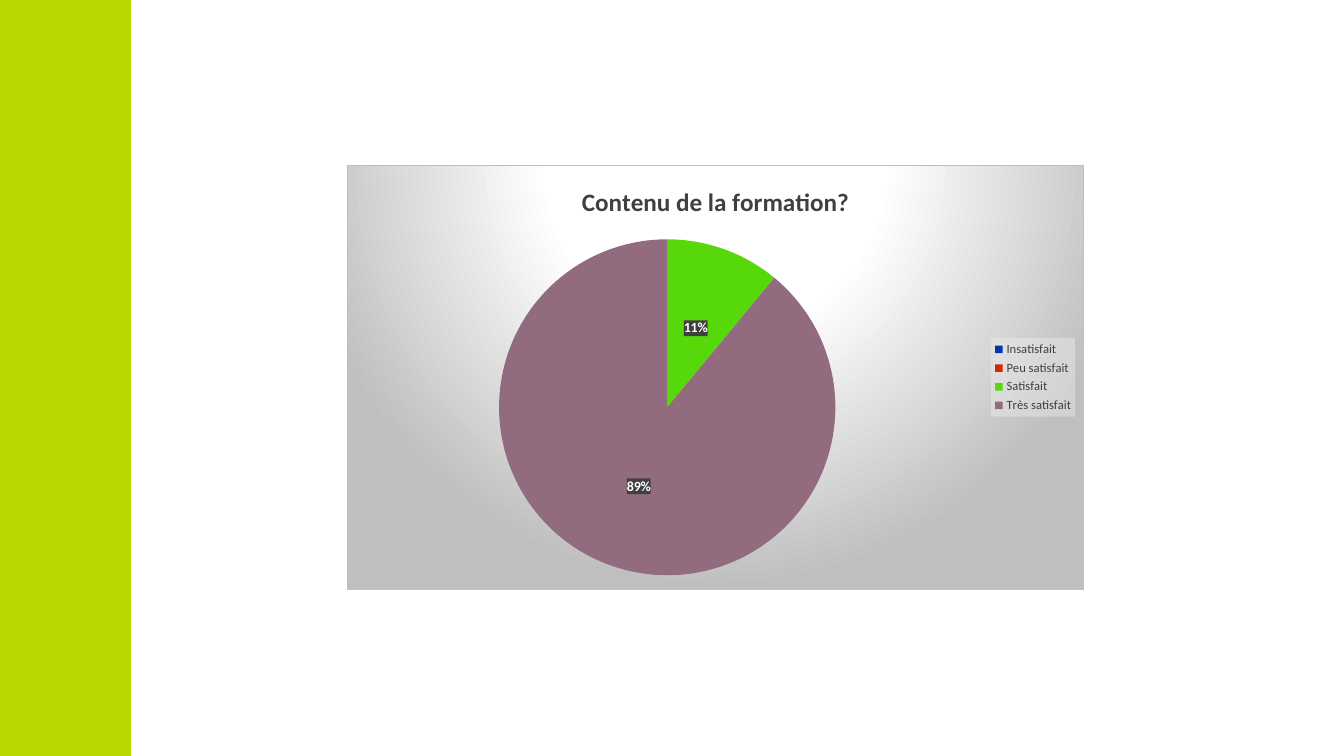
"""Builds a slide with a pie chart of satisfaction with the training content."""
from lxml import etree
from pptx import Presentation
from pptx.chart.data import CategoryChartData
from pptx.dml.color import RGBColor
from pptx.enum.chart import XL_CHART_TYPE, XL_LABEL_POSITION, XL_LEGEND_POSITION
from pptx.enum.shapes import MSO_SHAPE
from pptx.oxml import parse_xml
from pptx.oxml.ns import qn
from pptx.util import Pt

PIE = XL_CHART_TYPE.PIE
LABEL_CENTER = XL_LABEL_POSITION.CENTER
LEGEND_RIGHT = XL_LEGEND_POSITION.RIGHT
RECTANGLE = MSO_SHAPE.RECTANGLE

TITLE = "Contenu de la formation?"
ANSWERS = [
    ("Insatisfait", 0, "0038A8"),
    ("Peu satisfait", 0, "D82705"),
    ("Satisfait", 11, "56D80A"),
    ("Très satisfait", 89, "936B7F"),
]
FONT = "Calibri"
DARK, WHITE, GREY, LIME = "404040", "FFFFFF", "BFBFBF", "BAD800"
GRADIENT = [(0, WHITE), (39, WHITE), (100, GREY)]

SLIDE = (1344, 756)
BAND = (0, 0, 131, 756)
CHART = (347, 165, 737, 425)
PIE_BOX = (499, 239, 337, 337)
NAMESPACES = (
    'xmlns:c="http://schemas.openxmlformats.org/drawingml/2006/chart" '
    'xmlns:a="http://schemas.openxmlformats.org/drawingml/2006/main"'
)


def px(*lengths):
    return [round(length * 914400 / 100.8) for length in lengths]


def color(value):
    return RGBColor.from_string(value)


def set_font(font, size, value, bold=False):
    font.name, font.size, font.bold = FONT, Pt(size), bold
    font.color.rgb = color(value)


def shape_properties(content):
    return parse_xml(f"<c:spPr {NAMESPACES}>{content}</c:spPr>")


def clear_fill(value, opacity):
    return shape_properties(
        f'<a:solidFill><a:srgbClr val="{value}"><a:alpha val="{opacity * 1000}"/>'
        "</a:srgbClr></a:solidFill><a:ln><a:noFill/></a:ln>"
    )


def style_background(chart):
    stops = "".join(
        f'<a:gs pos="{position * 1000}"><a:srgbClr val="{value}"/></a:gs>'
        for position, value in GRADIENT
    )
    chart._chartSpace.find(qn("c:chart")).addnext(shape_properties(
        f'<a:gradFill><a:gsLst>{stops}</a:gsLst><a:path path="circle">'
        '<a:fillToRect l="50000" t="-80000" r="50000" b="180000"/></a:path></a:gradFill>'
        f'<a:ln w="9525"><a:solidFill><a:srgbClr val="{GREY}"/></a:solidFill></a:ln>'
    ))


def place_pie(chart):
    left, top, width, height = CHART
    fractions = {
        "x": (PIE_BOX[0] - left) / width,
        "y": (PIE_BOX[1] - top) / height,
        "w": PIE_BOX[2] / width,
        "h": PIE_BOX[3] / height,
    }
    plot_area = chart._chartSpace.find(".//" + qn("c:plotArea"))
    for layout in plot_area.findall(qn("c:layout")):
        plot_area.remove(layout)
    values = "".join(f'<c:{name} val="{part:.3f}"/>' for name, part in fractions.items())
    plot_area.insert(0, parse_xml(
        f'<c:layout {NAMESPACES}><c:manualLayout><c:layoutTarget val="inner"/>'
        f'<c:xMode val="edge"/><c:yMode val="edge"/>{values}</c:manualLayout></c:layout>'
    ))


def style_labels(series):
    labels = series.data_labels
    labels.show_value, labels.show_percentage = False, True
    labels.number_format, labels.number_format_is_linked = "0%", False
    labels.position = LABEL_CENTER
    set_font(labels.font, 10, WHITE, True)
    element = labels._element
    element.find(qn("c:txPr")).addprevious(clear_fill(DARK, 90))
    empty = [index for index, answer in enumerate(ANSWERS) if not answer[1]]
    for position, index in enumerate(empty):
        label = etree.Element(qn("c:dLbl"))
        etree.SubElement(label, qn("c:idx")).set("val", str(index))
        etree.SubElement(label, qn("c:delete")).set("val", "1")
        element.insert(position, label)


def add_pie(slide):
    data = CategoryChartData()
    data.categories = [name for name, _, _ in ANSWERS]
    data.add_series(TITLE, [value for _, value, _ in ANSWERS])
    chart = slide.shapes.add_chart(PIE, *px(*CHART), data).chart
    set_font(chart.font, 10, "000000")
    style_background(chart)
    place_pie(chart)

    chart.has_title = True
    paragraph = chart.chart_title.text_frame.paragraphs[0]
    paragraph.text = TITLE
    set_font(paragraph.font, 18, DARK, True)

    chart.has_legend = True
    legend = chart.legend
    legend.position, legend.include_in_layout = LEGEND_RIGHT, False
    set_font(legend.font, 9, DARK)
    legend._element.find(qn("c:txPr")).addprevious(clear_fill("F2F2F2", 39))

    plot = chart.plots[0]
    plot.vary_by_categories = True
    series = plot.series[0]
    for index, (_, _, value) in enumerate(ANSWERS):
        fill = series.points[index].format.fill
        fill.solid()
        fill.fore_color.rgb = color(value)
    style_labels(series)


def main():
    presentation = Presentation()
    presentation.slide_width, presentation.slide_height = px(*SLIDE)
    slide = presentation.slides.add_slide(presentation.slide_layouts[6])
    band = slide.shapes.add_shape(RECTANGLE, *px(*BAND))
    band.shadow.inherit = False
    band.fill.solid()
    band.fill.fore_color.rgb = color(LIME)
    band.line.fill.background()
    add_pie(slide)
    presentation.save("out.pptx")


if __name__ == "__main__":
    main()
